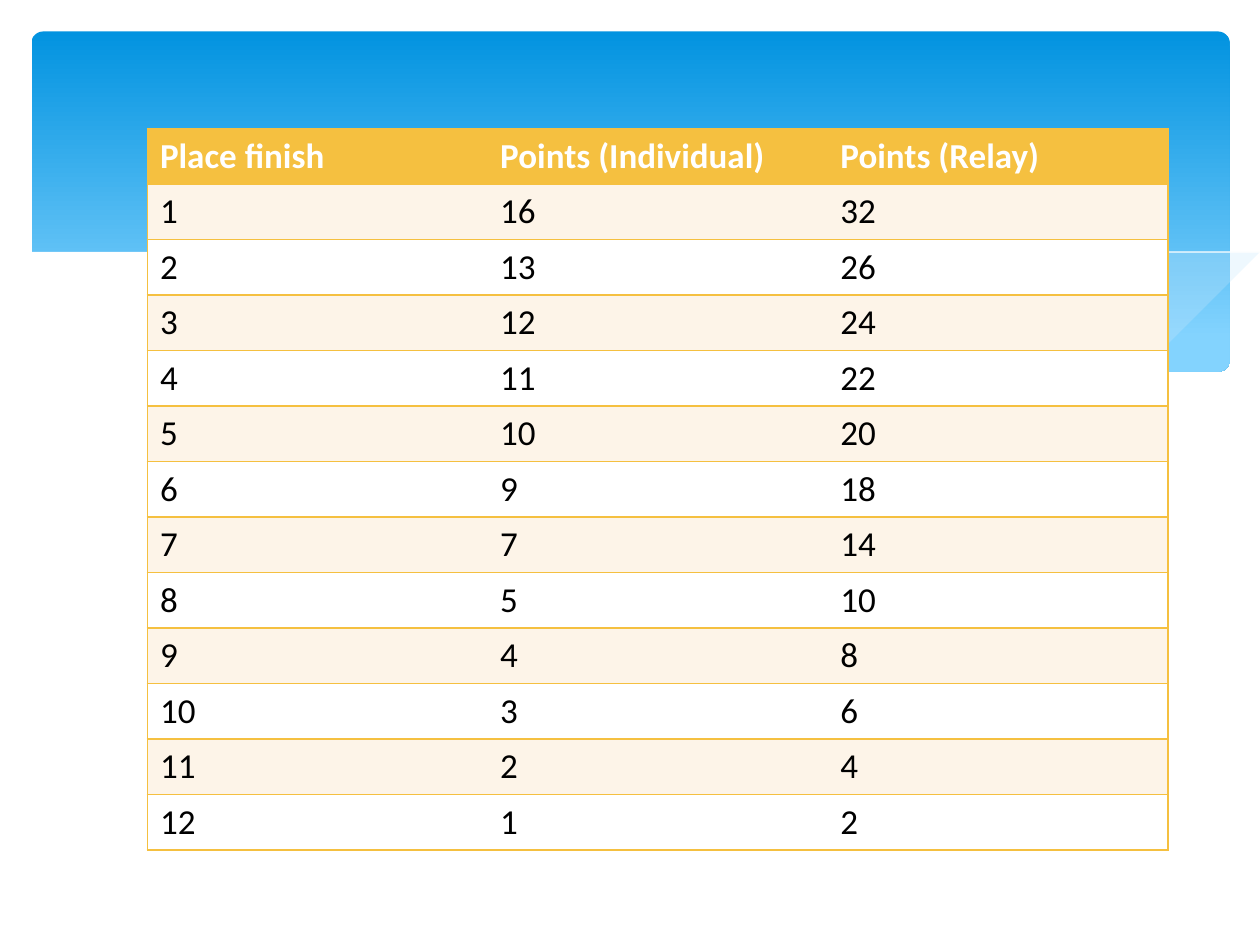
from dataclasses import dataclass
from typing import Optional

import pptx
import pptx.dml.color
import pptx.dml.fill
import pptx.enum.shapes
import pptx.oxml
import pptx.oxml.ns
import pptx.shapes.autoshape
import pptx.slide
import pptx.table
import pptx.util


@dataclass(frozen=True)
class Theme:
    font: str = "Calibri"
    text_size: int = 20
    border_width: int = 1
    white: str = "FFFFFF"
    black: str = "000000"
    gold: str = "F5C040"
    cream: str = "FDF4E8"
    mist: str = "C6E7FC"
    sky_top: str = "0293E0"
    sky_bottom: str = "83D3FE"


@dataclass(frozen=True)
class Wave:
    """An outline in grid units: filled when it has a fill, else a hairline."""
    points: tuple[tuple[float, float], ...]
    fill: Optional[str] = None
    opacity: int = 100


THEME = Theme()
SLIDE_WIDTH, SLIDE_HEIGHT = pptx.util.Inches(10), pptx.util.Inches(7.5)
GRID_COLUMNS = 10
UNIT = SLIDE_WIDTH // GRID_COLUMNS  # side of one square grid cell

WAVES = (
    # Right-hand swell
    Wave(((9.76, 2), (9.62, 2.02), (9.35, 2.07), (9.06, 2.13), (8.61, 2.23),
          (8.05, 2.37), (7.53, 2.48), (7.06, 2.57), (6.61, 2.65), (6.91, 2.69),
          (7.32, 2.74), (7.69, 2.77), (8.03, 2.78), (8.44, 2.77), (8.72, 2.74),
          (8.97, 2.7), (9.21, 2.65), (9.49, 2.57), (9.76, 2.47)),
         THEME.mist, 29),
    # Middle swell
    Wave(((8.93, 2.73), (8.66, 2.69), (8.07, 2.6), (7.41, 2.47), (6.68, 2.31),
          (6.29, 2.22), (5.84, 2.11), (5.41, 2.03), (5.02, 1.96), (4.65, 1.91),
          (4.2, 1.87), (3.8, 1.85), (3.44, 1.86), (3.13, 1.88), (2.86, 1.91),
          (3.23, 1.96), (3.62, 2.03), (4.04, 2.11), (4.49, 2.22), (4.91, 2.32),
          (5.66, 2.48), (6.18, 2.58), (6.65, 2.66), (7.09, 2.72), (7.48, 2.76),
          (7.85, 2.78), (8.28, 2.78), (8.57, 2.77)),
         THEME.mist, 40),
    # Hairline crests
    Wave(((3.09, 1.95), (3.28, 1.92), (3.53, 1.89), (3.87, 1.87), (4.33, 1.87),
          (4.69, 1.89), (5.1, 1.92), (5.56, 1.97), (6.08, 2.04), (6.65, 2.13),
          (7.27, 2.26), (7.95, 2.41), (8.69, 2.61), (9.07, 2.72))),
    Wave(((6.13, 2.57), (6.53, 2.46), (6.95, 2.35), (7.48, 2.23), (8.06, 2.1),
          (8.66, 1.99), (8.95, 1.94), (9.24, 1.9), (9.51, 1.87), (9.75, 1.85))),
    # White foreground that cuts the banner's lower edge
    Wave(((9.77, 2.46), (9.59, 2.53), (9.4, 2.59), (9.2, 2.65), (8.99, 2.69),
          (8.75, 2.73), (8.5, 2.75), (8.09, 2.77), (7.61, 2.75), (7.08, 2.7),
          (6.48, 2.62), (5.79, 2.5), (5.03, 2.33), (4.47, 2.2), (3.91, 2.07),
          (3.4, 1.97), (2.92, 1.9), (2.5, 1.86), (2.11, 1.84), (1.77, 1.84),
          (1.46, 1.85), (1.19, 1.87), (0.95, 1.91), (0.76, 1.95), (0.59, 1.99),
          (0.46, 2.03), (0.36, 2.07), (0.29, 2.1), (0.23, 2.13), (0.23, 3.29),
          (9.77, 3.29)),
         THEME.white),
)

HEADINGS = ("Place finish", "Points (Individual)", "Points (Relay)")
INDIVIDUAL_POINTS = (16, 13, 12, 11, 10, 9, 7, 5, 4, 3, 2, 1)
TABLE_LEFT, TABLE_TOP = 1.17, 1.02
COLUMN_WIDTH, ROW_HEIGHT = 2.7, 0.44


def grid(cells: float) -> int:
    return round(cells * UNIT)


def rgb(color: str) -> pptx.dml.color.RGBColor:
    return pptx.dml.color.RGBColor.from_string(color)


def set_solid(fill: pptx.dml.fill.FillFormat, color: str) -> None:
    fill.solid()
    fill.fore_color.rgb = rgb(color)


def draw_banner(slide: pptx.slide.Slide) -> None:
    banner = slide.shapes.add_shape(
        pptx.enum.shapes.MSO_SHAPE.ROUNDED_RECTANGLE,
        grid(0.25), grid(0.25), grid(9.51), grid(2.7))
    banner.adjustments[0] = 0.034
    banner.shadow.inherit = False
    banner.line.fill.background()
    banner.fill.gradient()
    banner.fill.gradient_angle = 270
    stops = ((0, THEME.sky_top), (0.9, THEME.sky_bottom))
    for stop, (position, color) in zip(banner.fill.gradient_stops, stops):
        stop.position = position
        stop.color.rgb = rgb(color)


def draw_wave(slide: pptx.slide.Slide, wave: Wave) -> None:
    start, *rest = wave.points
    builder = slide.shapes.build_freeform(*start, scale=UNIT)
    builder.add_line_segments(rest, close=wave.fill is not None)
    shape = builder.convert_to_shape()
    shape.shadow.inherit = False
    if wave.fill is None:
        shape.fill.background()
        shape.line.color.rgb = rgb(THEME.white)
        shape.line.width = pptx.util.Pt(0)
        return
    shape.line.fill.background()
    set_solid(shape.fill, wave.fill)
    if wave.opacity < 100:
        color = shape.fill._xPr.find(".//" + pptx.oxml.ns.qn("a:srgbClr"))
        alpha = pptx.oxml.parse_xml(
            f'<a:alpha {pptx.oxml.ns.nsdecls("a")} val="{wave.opacity * 1000}"/>')
        color.append(alpha)


def set_borders(cell: pptx.table._Cell, visible: str) -> None:
    """Draw the sides named in visible (of L, R, T, B) and hide the others."""
    properties = cell._tc.get_or_add_tcPr()
    width = pptx.util.Pt(THEME.border_width)
    for side in "LRTB":
        paint = (f'<a:solidFill><a:srgbClr val="{THEME.gold}"/></a:solidFill>'
                 if side in visible else "<a:noFill/>")
        properties.append(pptx.oxml.parse_xml(
            f'<a:ln{side} {pptx.oxml.ns.nsdecls("a")} w="{width}">{paint}</a:ln{side}>'))


def draw_points_table(slide: pptx.slide.Slide) -> None:
    # A relay scores double the individual points
    rows = [HEADINGS] + [(place, points, 2 * points)
                         for place, points in enumerate(INDIVIDUAL_POINTS, 1)]
    table = slide.shapes.add_table(
        len(rows), len(HEADINGS), grid(TABLE_LEFT), grid(TABLE_TOP),
        grid(COLUMN_WIDTH * len(HEADINGS)), grid(ROW_HEIGHT * len(rows))).table
    for row_index, values in enumerate(rows):
        is_heading = row_index == 0
        band = THEME.cream if row_index % 2 else THEME.white
        for side, (column_index, value) in zip(("L", "", "R"), enumerate(values)):
            cell = table.cell(row_index, column_index)
            set_borders(cell, "TB" + side)
            set_solid(cell.fill, THEME.gold if is_heading else band)
            cell.text = str(value)
            font = cell.text_frame.paragraphs[0].font
            font.name = THEME.font
            font.size = pptx.util.Pt(THEME.text_size)
            font.bold = is_heading
            font.color.rgb = rgb(THEME.white if is_heading else THEME.black)


def main() -> None:
    presentation = pptx.Presentation()
    presentation.slide_width = SLIDE_WIDTH
    presentation.slide_height = SLIDE_HEIGHT
    slide = presentation.slides.add_slide(presentation.slide_layouts[6])
    draw_banner(slide)
    for wave in WAVES:
        draw_wave(slide, wave)
    draw_points_table(slide)
    presentation.save("out.pptx")


if __name__ == "__main__":
    main()
